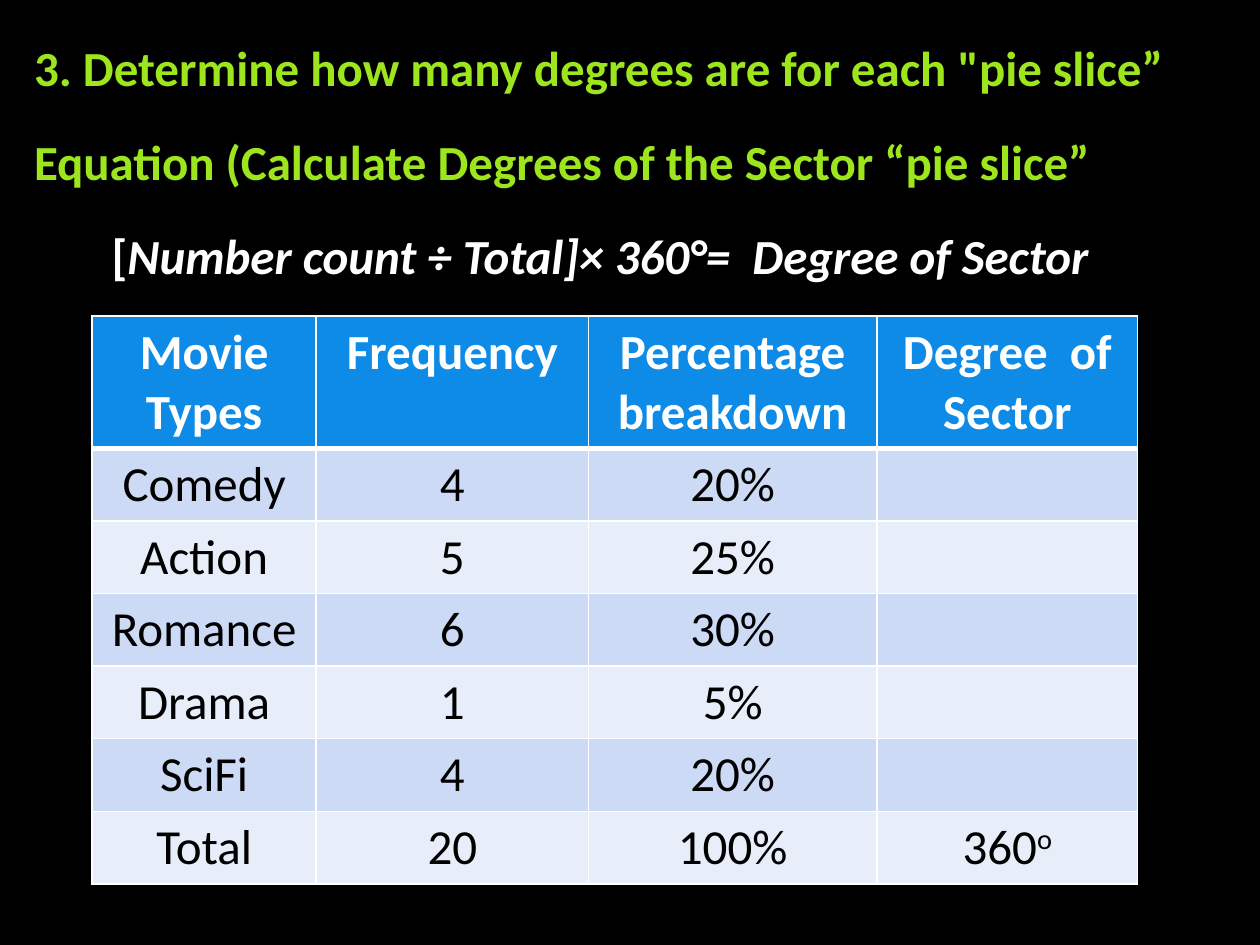
from dataclasses import dataclass

from lxml import etree
from pptx import Presentation
from pptx.dml.color import RGBColor
from pptx.enum.text import MSO_ANCHOR, MSO_AUTO_SIZE, PP_ALIGN
from pptx.oxml.ns import qn
from pptx.util import Pt

CENTER = PP_ALIGN.CENTER
MIDDLE = MSO_ANCHOR.MIDDLE
NO_FIT = MSO_AUTO_SIZE.NONE

FONT = "Calibri"
SIZE = 28
COLORS = {
    "back": "000000", "lime": "9DE61E", "white": "FFFFFF", "black": "000000",
    "head": "0D8BE6", "dark": "CCDAF5", "light": "E7EEFA",
}


@dataclass
class Piece:
    text: str
    color: str
    italic: bool = False


@dataclass
class Line:
    pieces: list[Piece]
    indent: float = 0


LINES = [
    Line([Piece('3. Determine how many degrees are for each "pie slice”', "lime")]),
    Line([Piece("Equation (Calculate Degrees of the Sector “pie slice”", "lime")]),
    Line([Piece("[", "white"),
          Piece("Number count ÷ Total]× 360°=  Degree of Sector", "white", True)], 44.3),
]
WIDTHS = [128.16, 155.52, 164.88, 149.04]
HEAD_H, ROW_H = 75.6, 41.4
ROWS = [
    ["Movie Types", "Frequency", "Percentage breakdown", "Degree  of Sector"],
    ["Comedy", "4", "20%", ""],
    ["Action", "5", "25%", ""],
    ["Romance", "6", "30%", ""],
    ["Drama", "1", "5%", ""],
    ["SciFi", "4", "20%", ""],
    ["Total", "20", "100%", "360"],
]


def rgb(name: str) -> RGBColor:
    return RGBColor.from_string(COLORS[name])


def style(run, color: str, bold: bool, italic: bool = False) -> None:
    font = run.font
    font.name, font.size = FONT, Pt(SIZE)
    font.bold, font.italic = bold, italic
    font.color.rgb = rgb(color)


def add_line(para, line: Line, gap: float) -> None:
    props = para._p.get_or_add_pPr()
    props.set("marL", str(Pt(line.indent)))
    props.set("indent", "0")
    etree.SubElement(props, qn("a:buNone"))
    para.space_before = Pt(gap)
    for piece in line.pieces:
        run = para.add_run()
        run.text = piece.text
        style(run, piece.color, True, piece.italic)


def set_edges(cell, top: float, base: float) -> None:
    props = cell._tc.get_or_add_tcPr()
    edges = {"a:lnL": 1, "a:lnR": 1, "a:lnT": top, "a:lnB": base}
    for spot, (tag, width) in enumerate(edges.items()):
        edge = etree.Element(qn(tag), w=str(Pt(width)))
        fill = etree.SubElement(edge, qn("a:solidFill"))
        etree.SubElement(fill, qn("a:srgbClr"), val=COLORS["white"])
        props.insert(spot, edge)


def fill_cell(cell, text: str, row: int, col: int) -> None:
    head = row == 0
    cell.fill.solid()
    cell.fill.fore_color.rgb = rgb("head" if head else "dark" if row % 2 else "light")
    set_edges(cell, 3 if row == 1 else 1, 3 if head else 1)
    if col == 3 or (col == 2 and not head):
        cell.vertical_anchor = MIDDLE
    para = cell.text_frame.paragraphs[0]
    para.alignment = CENTER
    if text:
        para.text = text
        style(para.runs[0], "white" if head else "black", head)


# Slide
deck = Presentation()
deck.slide_width, deck.slide_height = Pt(720), Pt(540)
slide = deck.slides.add_slide(deck.slide_layouts[1])
slide.background.fill.solid()
slide.background.fill.fore_color.rgb = rgb("back")
title = slide.shapes.title._element
title.getparent().remove(title)

# Instructions and formula
body = slide.placeholders[1]
body.left, body.top, body.width, body.height = Pt(12.24), Pt(18), Pt(691.2), Pt(414.72)
frame = body.text_frame
frame.word_wrap = True
frame.auto_size = NO_FIT
for num, line in enumerate(LINES):
    para = frame.add_paragraph() if num else frame.paragraphs[0]
    add_line(para, line, 20 if num else 0)

# Frequency table
table = slide.shapes.add_table(
    len(ROWS), len(WIDTHS), Pt(52.56), Pt(180.72), Pt(sum(WIDTHS)),
    Pt(HEAD_H + ROW_H * (len(ROWS) - 1))).table
for col, width in enumerate(WIDTHS):
    table.columns[col].width = Pt(width)
for row, texts in enumerate(ROWS):
    table.rows[row].height = Pt(ROW_H if row else HEAD_H)
    for col, text in enumerate(texts):
        fill_cell(table.cell(row, col), text, row, col)

# Raised degree sign in the total
sign = table.cell(len(ROWS) - 1, 3).text_frame.paragraphs[0].add_run()
sign.text = "o"
style(sign, "black", False)
sign._r.get_or_add_rPr().set("baseline", "30000")

deck.save("out.pptx")
